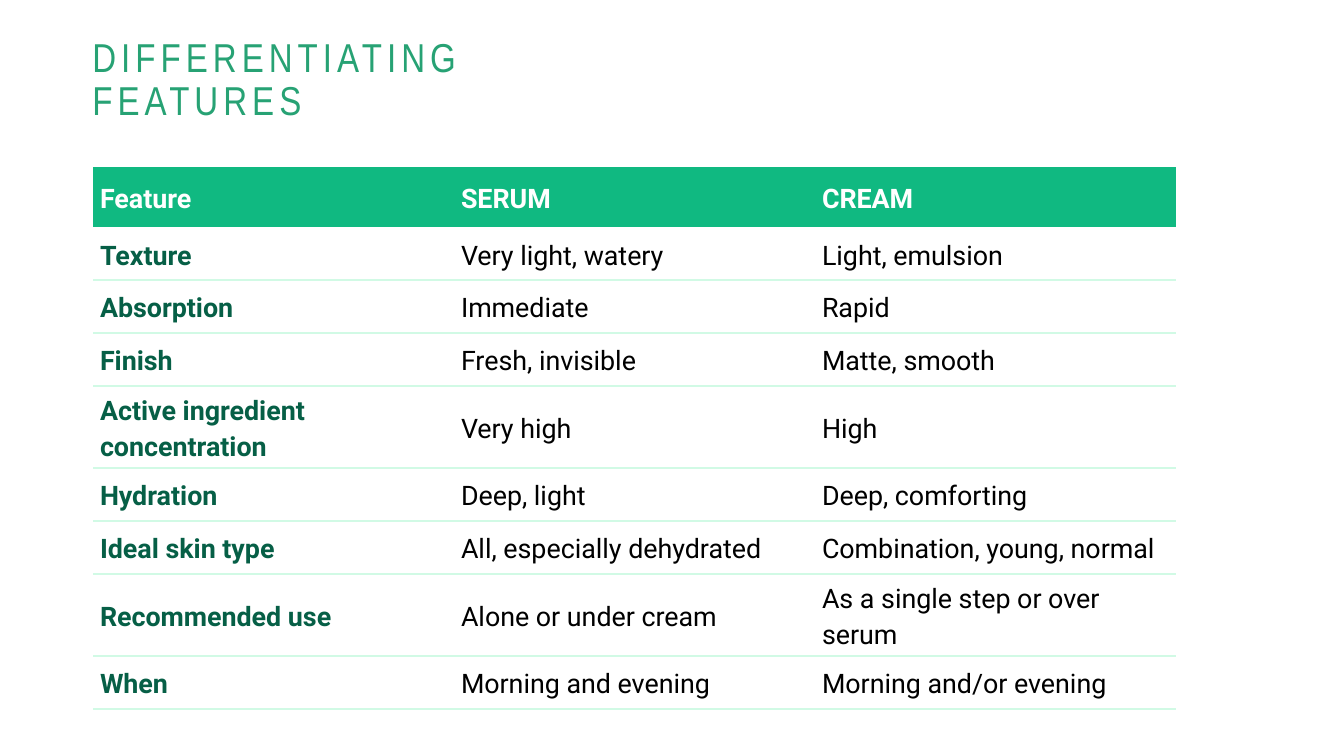
from lxml.etree import SubElement
from pptx import Presentation
from pptx.dml.color import RGBColor
from pptx.enum.shapes import MSO_SHAPE as Shape
from pptx.enum.text import MSO_ANCHOR as Anchor, PP_ALIGN as Align
from pptx.oxml.ns import qn
from pptx.util import Cm, Pt

TITLE_GREEN = RGBColor(0x27, 0xA2, 0x74)
HEADER_GREEN = RGBColor(0x10, 0xB9, 0x81)
LABEL_GREEN = RGBColor(0x06, 0x5F, 0x46)
RULE_MINT = RGBColor(0xD1, 0xFA, 0xE5)
WHITE = RGBColor(0xFF, 0xFF, 0xFF)
BLACK = RGBColor(0x00, 0x00, 0x00)
PLAIN_TABLE = "{2D5ABB26-0587-4C30-8999-92F81FD0307C}"

FEATURES = [
    ("Feature", "SERUM", "CREAM"),
    ("Texture", "Very light, watery", "Light, emulsion"),
    ("Absorption", "Immediate", "Rapid"),
    ("Finish", "Fresh, invisible", "Matte, smooth"),
    ("Active ingredient concentration", "Very high", "High"),
    ("Hydration", "Deep, light", "Deep, comforting"),
    ("Ideal skin type", "All, especially dehydrated", "Combination, young, normal"),
    ("Recommended use", "Alone or under cream", "As a single step or over serum"),
    ("When", "Morning and evening", "Morning and/or evening"),
]


def write(para, text, *, font, size, color, bold=False, line=1.0, after=0, tracking=0):
    para.alignment = Align.LEFT
    para.line_spacing = line
    para.space_after = Pt(after)
    span = para.add_run()
    span.text = text
    span.font.name = font
    span.font.size = Pt(size)
    span.font.bold = bold
    span.font.color.rgb = color
    if tracking:
        span.font._element.set("spc", str(tracking * 100))


class FeatureSlide:
    """Style and drawing methods for a feature comparison slide."""

    title_font = "Arial Narrow"
    table_font = "Roboto"

    def __init__(self, deck):
        self.page = deck.slides.add_slide(deck.slide_layouts[6])
        self.page.background.fill.solid()
        self.page.background.fill.fore_color.rgb = WHITE

    def title(self, text, left, top, width, height):
        box = self.page.shapes.add_shape(
            Shape.RECTANGLE, Cm(left), Cm(top), Cm(width), Cm(height))
        box.shadow.inherit = False
        box.fill.solid()
        box.fill.fore_color.rgb = WHITE
        box.line.fill.background()
        frame = box.text_frame
        frame.word_wrap = True
        frame.vertical_anchor = Anchor.MIDDLE
        frame.margin_left = frame.margin_right = 0
        frame.margin_top = frame.margin_bottom = 0
        write(frame.paragraphs[0], text, font=self.title_font, size=24,
              color=TITLE_GREEN, line=0.9, tracking=3)

    def table(self, rows, left, top, column_width, header_height, row_height):
        columns = len(rows[0])
        height = header_height + row_height * (len(rows) - 1)
        table = self.page.shapes.add_table(
            len(rows), columns, Cm(left), Cm(top),
            Cm(column_width * columns), Cm(height)).table
        table.horz_banding = False
        table._tbl.tblPr.find(qn("a:tableStyleId")).text = PLAIN_TABLE
        for column in table.columns:
            column.width = Cm(column_width)
        for r, texts in enumerate(rows):
            table.rows[r].height = Cm(row_height if r else header_height)
            for c, text in enumerate(texts):
                self.cell(table.cell(r, c), text, r == 0, c == 0)
                if r:
                    self.rules(table.cell(r, c), ["lnB"] if r == 1 else ["lnT", "lnB"])

    def cell(self, cell, text, is_header, is_label):
        cell.vertical_anchor = Anchor.MIDDLE
        cell.margin_left = cell.margin_right = Cm(0.14)
        cell.margin_top = cell.margin_bottom = Cm(0.14 if is_header else 0.11)
        if is_header:
            cell.fill.solid()
            cell.fill.fore_color.rgb = HEADER_GREEN
        else:
            cell.fill.background()
        color = WHITE if is_header else LABEL_GREEN if is_label else BLACK
        write(cell.text_frame.paragraphs[0], text, font=self.table_font, size=16,
              color=color, bold=is_header or is_label, line=1.15, after=10)

    def rules(self, cell, edges):
        properties = cell._tc.get_or_add_tcPr()
        for place, edge in enumerate(edges):
            rule = SubElement(properties, qn(f"a:{edge}"), w=str(Pt(1.5)))
            fill = SubElement(rule, qn("a:solidFill"))
            SubElement(fill, qn("a:srgbClr"), val=str(RULE_MINT))
            properties.insert(place, rule)


def main():
    deck = Presentation()
    deck.slide_width, deck.slide_height = Cm(28.22), Cm(15.88)
    slide = FeatureSlide(deck)
    slide.title("DIFFERENTIATING FEATURES", 1.94, 1.25, 11.58, 0.91)
    slide.table(FEATURES, 1.96, 3.51, 7.58, 1.26, 1.11)
    deck.save("out.pptx")


if __name__ == "__main__":
    main()
